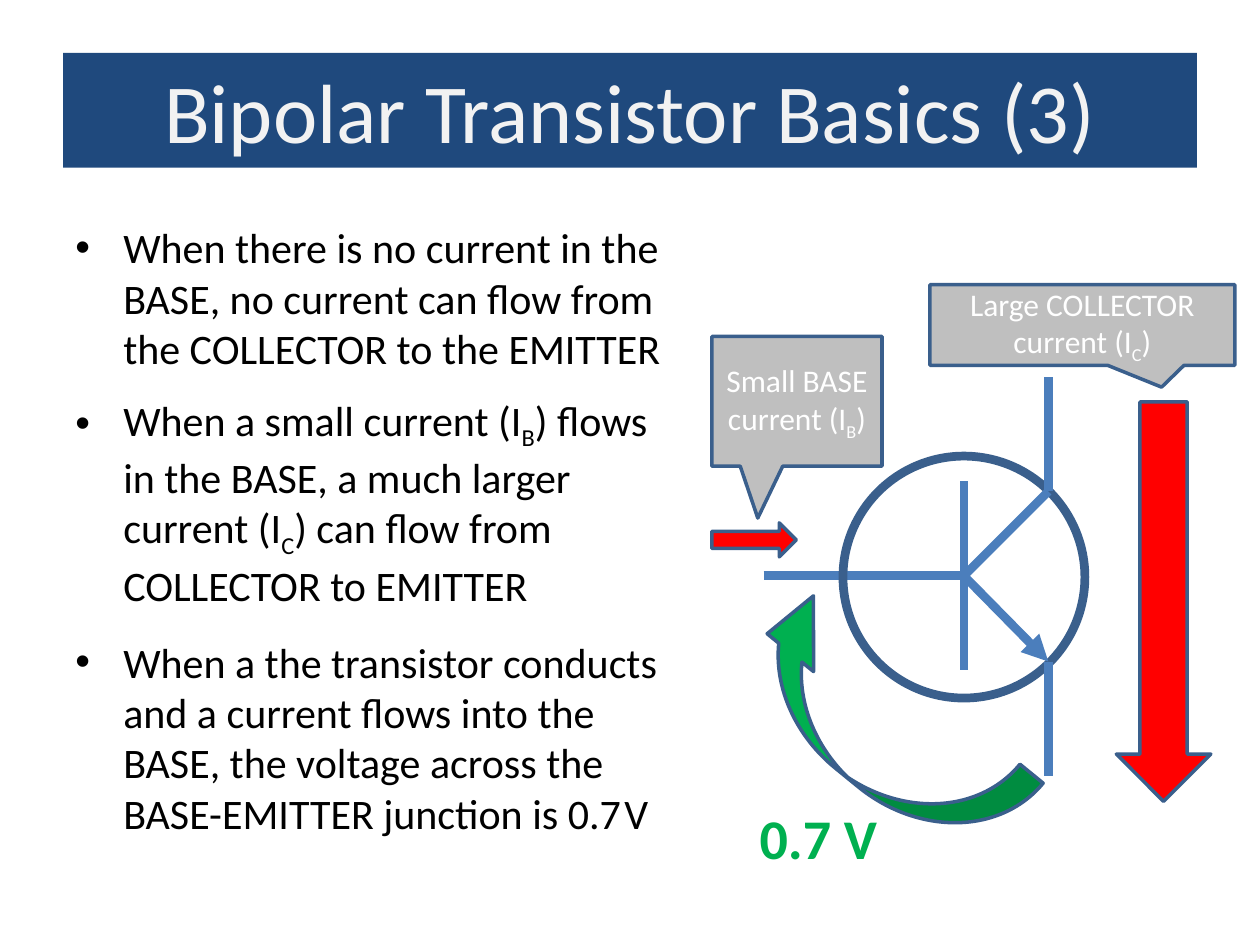
from pptx import Presentation
from pptx import util as u
from pptx.dml.color import RGBColor
from pptx.enum import shapes, text
from pptx.oxml.ns import qn
from lxml import etree

BLUE, OUTLINE, RED, GREEN, GREY = "4B7EBC", "3A5F8C", "FF0000", "00B050", "BFBFBF"
SUBSCRIPT = {"baseline": "-25000"}
THIN = {"sz": "800"}


def color(value):
    return RGBColor.from_string(value)


class SlideBuilder:
    """Holds the style and the current slide, with one method per element."""

    font = "Calibri"

    def __init__(self, slide):
        self.slide = slide

    def place(self, shape, box):
        for name, value in zip(("left", "top", "width", "height"), box):
            setattr(shape, name, u.Inches(value))

    def add_text(self, shape, content, size, fill, accent=SUBSCRIPT, bold=False,
                 align=text.PP_ALIGN.LEFT, anchor=text.MSO_ANCHOR.TOP):
        frame = shape.text_frame
        frame_format = {"word_wrap": True, "vertical_anchor": anchor,
                        "auto_size": text.MSO_AUTO_SIZE.NONE}
        for name, value in frame_format.items():
            setattr(frame, name, value)
        paragraph = frame.paragraphs[0]
        paragraph.alignment = align
        run_format = {"name": self.font, "size": u.Pt(size), "bold": bold}
        for index, part in enumerate(content.split("~")):
            run = paragraph.add_run()
            run.text = part
            for name, value in run_format.items():
                setattr(run.font, name, value)
            run.font.color.rgb = color(fill)
            if index % 2:
                for name, value in accent.items():
                    run.font._element.set(name, value)
        return paragraph

    def title(self, content, box):
        shape = self.slide.shapes.title
        self.place(shape, box)
        shape.fill.solid()
        shape.fill.fore_color.rgb = color("1F497D")
        self.add_text(shape, content, 48, "F2F2F2", align=text.PP_ALIGN.CENTER,
                      anchor=text.MSO_ANCHOR.MIDDLE)

    def label(self, content, box, size, fill, **options):
        shape = self.slide.shapes.add_textbox(*map(u.Inches, box))
        return self.add_text(shape, content, size, fill, **options)

    def bullet(self, content, top, height, **options):
        paragraph = self.label(content, (0.5, top, 4.92, height), 24, "000000", **options)
        paragraph.space_after = u.Pt(12)
        properties = paragraph._p.get_or_add_pPr()
        properties.set("marL", str(u.Inches(0.38)))
        properties.set("indent", str(u.Inches(-0.38)))
        etree.SubElement(properties, qn("a:buFont")).set("typeface", "Arial")
        etree.SubElement(properties, qn("a:buChar")).set("char", "•")

    def shape(self, kind, box, fill=None, width=2, adjust=(), rotation=0):
        shape = self.slide.shapes.add_shape(kind, *map(u.Inches, box))
        shape.shadow.inherit = False
        shape.rotation = rotation
        if fill:
            shape.fill.solid()
            shape.fill.fore_color.rgb = color(fill)
        else:
            shape.fill.background()
        shape.line.color.rgb = color(OUTLINE)
        shape.line.width = u.Pt(width)
        for index, value in enumerate(adjust):
            shape.adjustments[index] = value
        return shape

    def callout(self, content, box, adjust):
        shape = self.shape(shapes.MSO_SHAPE.RECTANGULAR_CALLOUT, box, GREY, adjust=adjust)
        self.add_text(shape, content, 18, "FFFFFF", align=text.PP_ALIGN.CENTER,
                      anchor=text.MSO_ANCHOR.MIDDLE)

    def line(self, start, end, arrow=False):
        connector = self.slide.shapes.add_connector(
            shapes.MSO_CONNECTOR.STRAIGHT, *map(u.Inches, start + end))
        connector.line.color.rgb = color(BLUE)
        connector.line.width = u.Pt(5)
        if arrow:
            line = connector.line._get_or_add_ln()
            etree.SubElement(line, qn("a:tailEnd")).set("type", "triangle")
        etree.SubElement(connector._element.spPr, qn("a:effectLst"))


def main():
    presentation = Presentation()
    presentation.slide_width = u.Inches(10)
    presentation.slide_height = u.Inches(7.5)
    builder = SlideBuilder(presentation.slides.add_slide(presentation.slide_layouts[5]))

    builder.title("Bipolar Transistor Basics (3)", (0.5, 0.42, 9, 0.91))
    builder.bullet("When there is no current in the BASE, no current can flow "
                   "from the COLLECTOR to the EMITTER", 1.71, 1.28)

    base, collector, emitter = (7.65, 4.57), (8.32, 3.9), (8.32, 5.25)
    builder.line((7.65, 3.82), (7.65, 5.32))
    builder.line((6.06, 4.57), base)
    builder.shape(shapes.MSO_SHAPE.OVAL, (6.69, 3.62, 1.92, 1.92), width=5)
    builder.line(base, collector)
    builder.line(base, emitter, arrow=True)
    builder.line(collector, (8.32, 2.99))
    builder.line(emitter, (8.32, 6.16))

    builder.bullet("When a small current (I~B~) flows in the BASE, a much larger "
                   "current (I~C~) can flow from COLLECTOR to EMITTER", 3.08, 1.84)
    builder.shape(shapes.MSO_SHAPE.DOWN_ARROW, (8.86, 3.19, 0.75, 3.17), RED)
    builder.shape(shapes.MSO_SHAPE.RIGHT_ARROW, (5.65, 4.15, 0.67, 0.27), RED)
    builder.callout("Small BASE current (I~B~)", (5.65, 2.67, 1.35, 1.03), (-0.23, 0.9))
    builder.callout("Large COLLECTOR current (I~C~)", (7.38, 2.26, 2.42, 0.64), (0.26, 0.77))
    builder.bullet("When a the transistor conducts and a current flows into the BASE, "
                   "the voltage across the BASE-EMITTER junction is 0.7~ ~V",
                   5, 1.84, accent=THIN)
    builder.shape(shapes.MSO_SHAPE.CURVED_LEFT_ARROW, (6.5, 4.47, 0.95, 2.59), GREEN,
                  adjust=(0.25, 0.5, 0.49), rotation=129.2)
    builder.label("0.7 V", (5.93, 6.33, 1.4, 0.64), 32, GREEN, bold=True)

    presentation.save("out.pptx")


if __name__ == "__main__":
    main()
